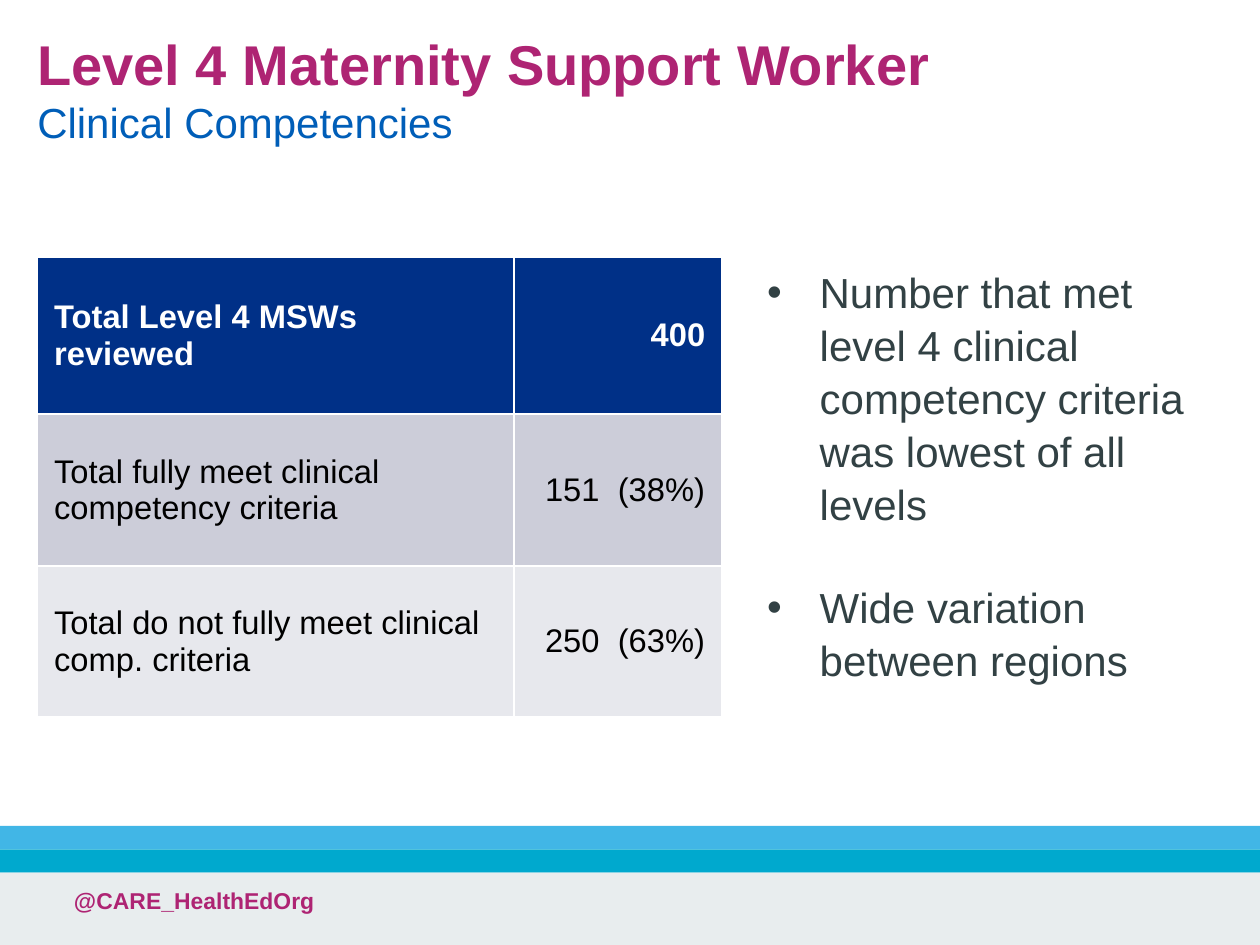
from dataclasses import dataclass
from pptx import Presentation
from pptx.dml.color import RGBColor as RGB
from pptx.enum.shapes import MSO_SHAPE as Shape
from pptx.enum.text import MSO_ANCHOR as Anchor, MSO_AUTO_SIZE as AutoSize, PP_ALIGN as Align
from pptx.util import Pt


@dataclass(frozen=True)
class Theme:
    font: str = "Arial"
    magenta: str = "AE2473"
    blue: str = "005EB8"
    navy: str = "003087"
    sky: str = "41B6E6"
    aqua: str = "00A9CE"
    mist: str = "E8EDEE"
    slate: str = "324144"
    white: str = "FFFFFF"
    black: str = "000000"
    row_dark: str = "CCCDD9"
    row_light: str = "E7E8ED"
    heading: float = 24
    body: float = 18
    cell: float = 14
    footer: float = 9.8


theme = Theme()


def write(paragraph, text, size, color, bold=False):
    run = paragraph.add_run()
    run.text = text
    run.font.name = theme.font
    run.font.size = Pt(size)
    run.font.bold = bold
    run.font.color.rgb = RGB.from_string(color)


def place(item, left, top, width, height):
    item.left, item.top, item.width, item.height = Pt(left), Pt(top), Pt(width), Pt(height)


deck = Presentation()
deck.slide_width, deck.slide_height = Pt(540), Pt(405)
slide = deck.slides.add_slide(deck.slide_layouts[1])

bands = [(354, 10, theme.sky), (364, 10, theme.aqua), (374, 31, theme.mist)]
for top, height, color in bands:
    band = slide.shapes.add_shape(Shape.RECTANGLE, 0, Pt(top), Pt(540), Pt(height))
    band.shadow.inherit = False
    band.fill.solid()
    band.fill.fore_color.rgb = RGB.from_string(color)
    band.line.fill.background()

handle = slide.shapes.add_textbox(Pt(24.6), Pt(376.6), Pt(315), Pt(28))
handle.text_frame.word_wrap = True
write(handle.text_frame.paragraphs[0], "@CARE_HealthEdOrg", theme.footer, theme.magenta, True)

heading = slide.shapes.title
place(heading, 16, 10, 483, 58.5)
frame = heading.text_frame
frame.auto_size = AutoSize.NONE
frame.vertical_anchor = Anchor.TOP
frame.margin_left = frame.margin_right = frame.margin_bottom = 0
frame.margin_top = Pt(2.5)
heading_lines = [
    ("Level 4 Maternity Support Worker", theme.heading, theme.magenta, True),
    ("Clinical Competencies", theme.body, theme.blue, False),
]
for number, line in enumerate(heading_lines):
    paragraph = frame.add_paragraph() if number else frame.paragraphs[0]
    paragraph.alignment = Align.LEFT
    write(paragraph, *line)

reviews = [
    ("Total Level 4 MSWs reviewed", "400", theme.navy, theme.white),
    ("Total fully meet clinical competency criteria", "151  (38%)", theme.row_dark, theme.black),
    ("Total do not fully meet clinical comp. criteria", "250  (63%)", theme.row_light, theme.black),
]
competencies = slide.shapes.add_table(3, 2, Pt(16), Pt(110), Pt(293.5), Pt(197.5)).table
for column, width in zip(competencies.columns, (204.5, 89)):
    column.width = Pt(width)
for row, height in zip(competencies.rows, (67.5, 65, 65)):
    row.height = Pt(height)
for row, (label, count, fill, color) in enumerate(reviews):
    for column, (text, align) in enumerate([(label, Align.LEFT), (count, Align.RIGHT)]):
        cell = competencies.cell(row, column)
        cell.fill.solid()
        cell.fill.fore_color.rgb = RGB.from_string(fill)
        cell.vertical_anchor = Anchor.MIDDLE
        paragraph = cell.text_frame.paragraphs[0]
        paragraph.alignment = align
        write(paragraph, text, theme.cell, color, row == 0)

findings = slide.placeholders[1]
place(findings, 321.6, 109.5, 202.5, 181.5)
frame = findings.text_frame
frame.auto_size = AutoSize.NONE
points = [
    "Number that met level 4 clinical competency criteria was lowest of all levels",
    "Wide variation between regions",
]
for number, point in enumerate(points):
    paragraph = frame.add_paragraph() if number else frame.paragraphs[0]
    paragraph.line_spacing = 1.05
    paragraph.space_before = Pt(21.6 * number)
    properties = paragraph._p.get_or_add_pPr()
    properties.set("marL", str(Pt(22.5)))
    properties.set("indent", str(Pt(-22.5)))
    write(paragraph, point, theme.body, theme.slate)

deck.save("out.pptx")
